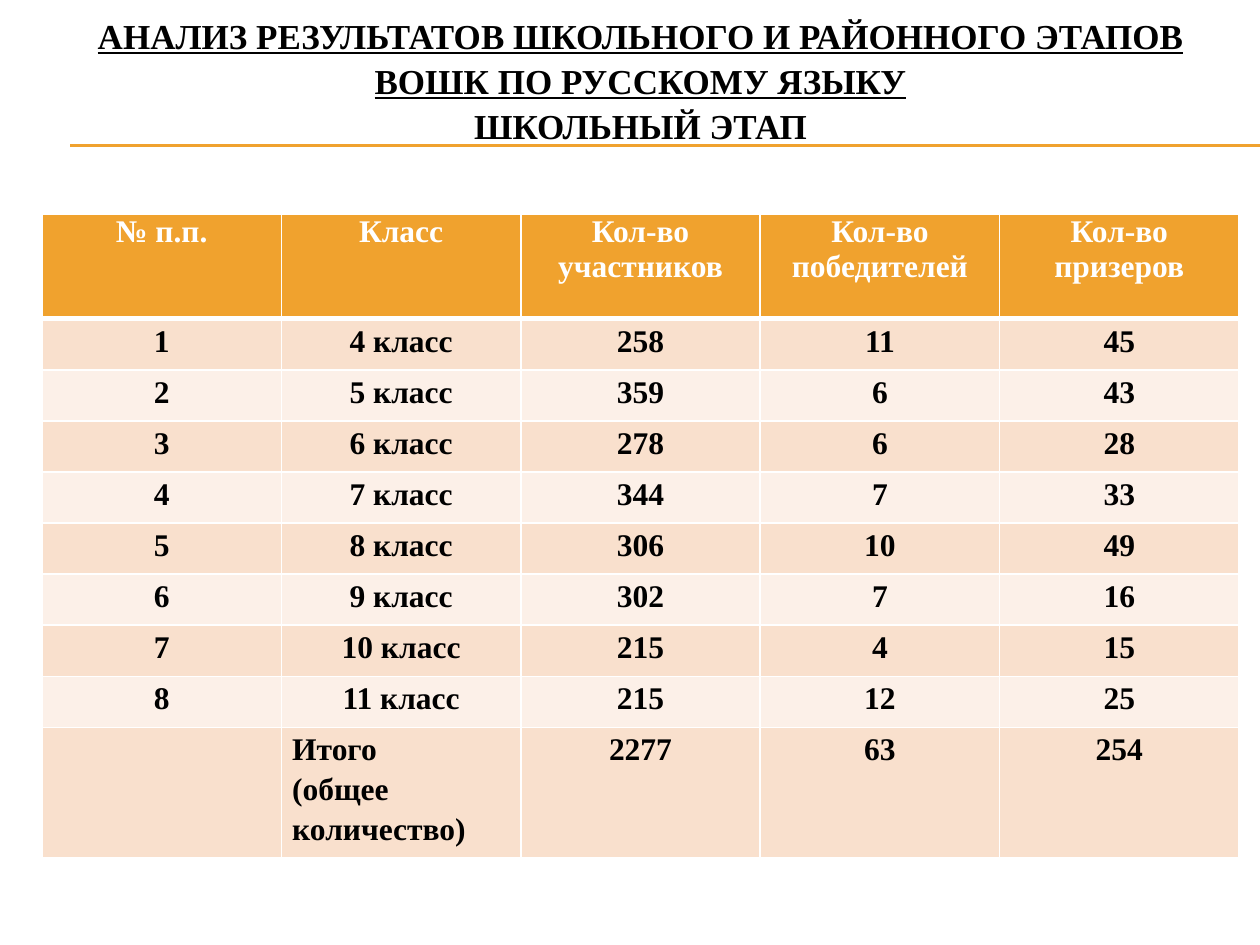
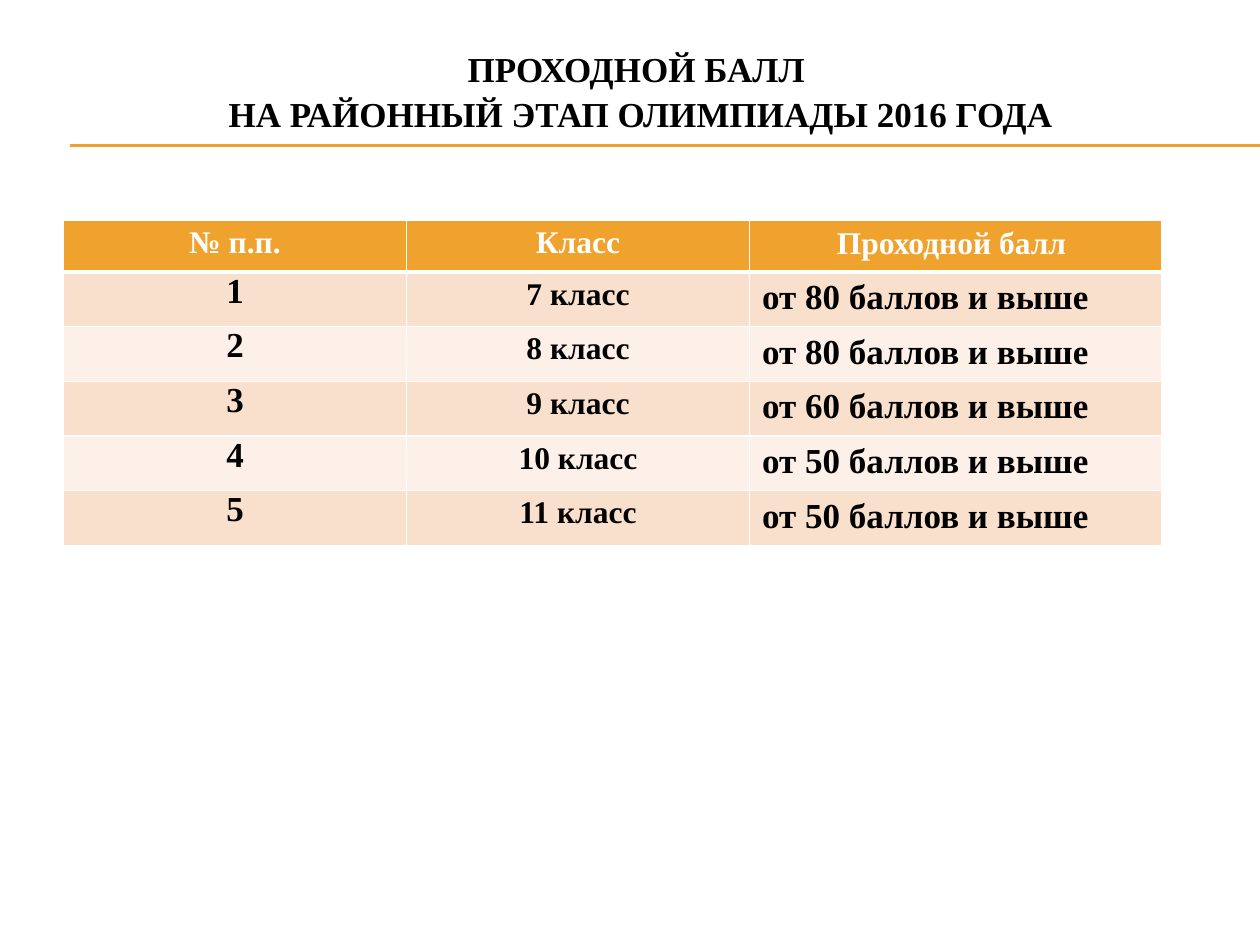
from dataclasses import dataclass

from lxml.etree import SubElement
from pptx import Presentation
from pptx.dml.color import RGBColor
from pptx.enum.shapes import MSO_CONNECTOR
from pptx.enum.text import MSO_ANCHOR, PP_ALIGN
from pptx.oxml import parse_xml
from pptx.oxml.ns import nsdecls, qn
from pptx.util import Pt


@dataclass(frozen=True)
class Theme:
    font: str = "Times New Roman"
    accent: str = "F0A22E"
    bands: tuple = ("F9E0CD", "FCF0E8")
    paper: str = "FFFFFF"
    ink: str = "000000"
    large: float = 20
    normal: float = 18
    title_spacing: float = 1.08
    loose: float = 1.15
    rule: float = 0.75
    grid: float = 1
    header_rule: float = 3


@dataclass(frozen=True)
class Column:
    width: float
    size: float = 18
    spacing: float = 1.15
    header_spacing: float = 1.15
    side: float = 5.04
    top: float = 0
    align: int = PP_ALIGN.CENTER


THEME = Theme()
SLIDE_SIZE = (720, 540)
RULES = ((40.3, 82.8), (40.3, 83.4))

RESULTS = [
    ("4 класс", 258, 11, 45),
    ("5 класс", 359, 6, 43),
    ("6 класс", 278, 6, 28),
    ("7 класс", 344, 7, 33),
    ("8 класс", 306, 10, 49),
    ("9 класс", 302, 7, 16),
    ("10 класс", 215, 4, 15),
    ("11 класс", 215, 12, 25),
]
PASS_MARKS = [("7 класс", 80), ("8 класс", 80), ("9 класс", 60),
              ("10 класс", 50), ("11 класс", 50)]

PAGES = [
    {
        "title": [("АНАЛИЗ РЕЗУЛЬТАТОВ ШКОЛЬНОГО И РАЙОННОГО ЭТАПОВ ВОШК ПО РУССКОМУ ЯЗЫКУ", True),
                  ("ШКОЛЬНЫЙ ЭТАП", False)],
        "title_height": 90,
        "origin": (24, 122.6),
        "columns": [Column(136.8, header_spacing=1, side=6.2)] * 5,
        "heights": [59.5] + [29.2] * len(RESULTS) + [68.5],
        "header": ["№ п.п.", "Класс", "Кол-во участников", "Кол-во победителей", "Кол-во призеров"],
        "rows": [(number, *result) for number, result in enumerate(RESULTS, 1)]
                + [("", "Итого\n(общее количество)", 2277, 63, 254)],
        "left_aligned": {(len(RESULTS) + 1, 1)},
    },
    {
        "title": [("ПРОХОДНОЙ БАЛЛ ", False), ("НА РАЙОННЫЙ ЭТАП ОЛИМПИАДЫ 2016 ГОДА", False)],
        "title_height": 102.2,
        "origin": (36.3, 126),
        "columns": [
            Column(196, size=THEME.large, spacing=1),
            Column(196),
            Column(235.5, size=THEME.large, spacing=1, header_spacing=1,
                   side=7.2, top=3.6, align=PP_ALIGN.LEFT),
        ],
        "heights": [29.4] * (len(PASS_MARKS) + 1),
        "header": ["№ п.п.", "Класс", "Проходной балл "],
        "rows": [(number, grade, f"от {mark} баллов и выше")
                 for number, (grade, mark) in enumerate(PASS_MARKS, 1)],
        "left_aligned": set(),
    },
]


def rgb(colour):
    return RGBColor.from_string(colour)


def style_font(font, size, colour):
    font.name, font.size, font.bold = THEME.font, Pt(size), True
    font.color.rgb = rgb(colour)


def add_rules(slide):
    for left, top in RULES:
        rule = slide.shapes.add_connector(
            MSO_CONNECTOR.STRAIGHT, Pt(left), Pt(top), Pt(SLIDE_SIZE[0]), Pt(top))
        rule.line.color.rgb = rgb(THEME.accent)
        rule.line.width = Pt(THEME.rule)
        SubElement(rule._element.spPr, qn("a:effectLst"))


def add_title(slide, lines, height):
    frame = slide.shapes.add_textbox(Pt(24), Pt(0), Pt(684), Pt(height)).text_frame
    frame.word_wrap = True
    frame.vertical_anchor = MSO_ANCHOR.MIDDLE
    heading = frame.paragraphs[0]
    heading.alignment = PP_ALIGN.CENTER
    heading.line_spacing = THEME.title_spacing
    style_font(heading.font, THEME.large, THEME.ink)
    for index, (line, underlined) in enumerate(lines):
        if index:
            heading.add_line_break()
        run = heading.add_run()
        run.text = line
        run.font.underline = underlined


def set_borders(cell, row):
    widths = {
        "lnL": THEME.grid,
        "lnR": THEME.grid,
        "lnT": THEME.header_rule if row == 1 else THEME.grid,
        "lnB": THEME.header_rule if row == 0 else THEME.grid,
    }
    properties = cell._tc.get_or_add_tcPr()
    for index, (side, width) in enumerate(widths.items()):
        properties.insert(index, parse_xml(
            f'<a:{side} {nsdecls("a")} w="{Pt(width)}"><a:solidFill>'
            f'<a:srgbClr val="{THEME.paper}"/></a:solidFill></a:{side}>'))


def fill_cell(cell, content, row, column, align):
    header = row == 0
    cell.text = str(content)
    cell.margin_left = cell.margin_right = Pt(column.side)
    cell.margin_top = cell.margin_bottom = Pt(column.top)
    cell.fill.solid()
    cell.fill.fore_color.rgb = rgb(THEME.accent if header else THEME.bands[(row - 1) % 2])
    set_borders(cell, row)
    for paragraph in cell.text_frame.paragraphs:
        paragraph.alignment = align
        paragraph.line_spacing = column.header_spacing if header else column.spacing
        style_font(paragraph.font, THEME.normal if header else column.size,
                   THEME.paper if header else THEME.ink)


def add_results(slide, page):
    columns, heights = page["columns"], page["heights"]
    left, top = page["origin"]
    grid = slide.shapes.add_table(
        len(heights), len(columns), Pt(left), Pt(top),
        Pt(sum(column.width for column in columns)), Pt(sum(heights))).table
    for grid_column, column in zip(grid.columns, columns):
        grid_column.width = Pt(column.width)
    for grid_row, height in zip(grid.rows, heights):
        grid_row.height = Pt(height)
    for row, contents in enumerate([page["header"], *page["rows"]]):
        for index, (content, column) in enumerate(zip(contents, columns)):
            align = PP_ALIGN.CENTER if row == 0 else column.align
            if (row, index) in page["left_aligned"]:
                align = PP_ALIGN.LEFT
            fill_cell(grid.cell(row, index), content, row, column, align)


def main():
    deck = Presentation()
    deck.slide_width, deck.slide_height = map(Pt, SLIDE_SIZE)
    for page in PAGES:
        slide = deck.slides.add_slide(deck.slide_layouts[6])
        add_rules(slide)
        add_title(slide, page["title"], page["title_height"])
        add_results(slide, page)
    deck.save("out.pptx")


if __name__ == "__main__":
    main()
